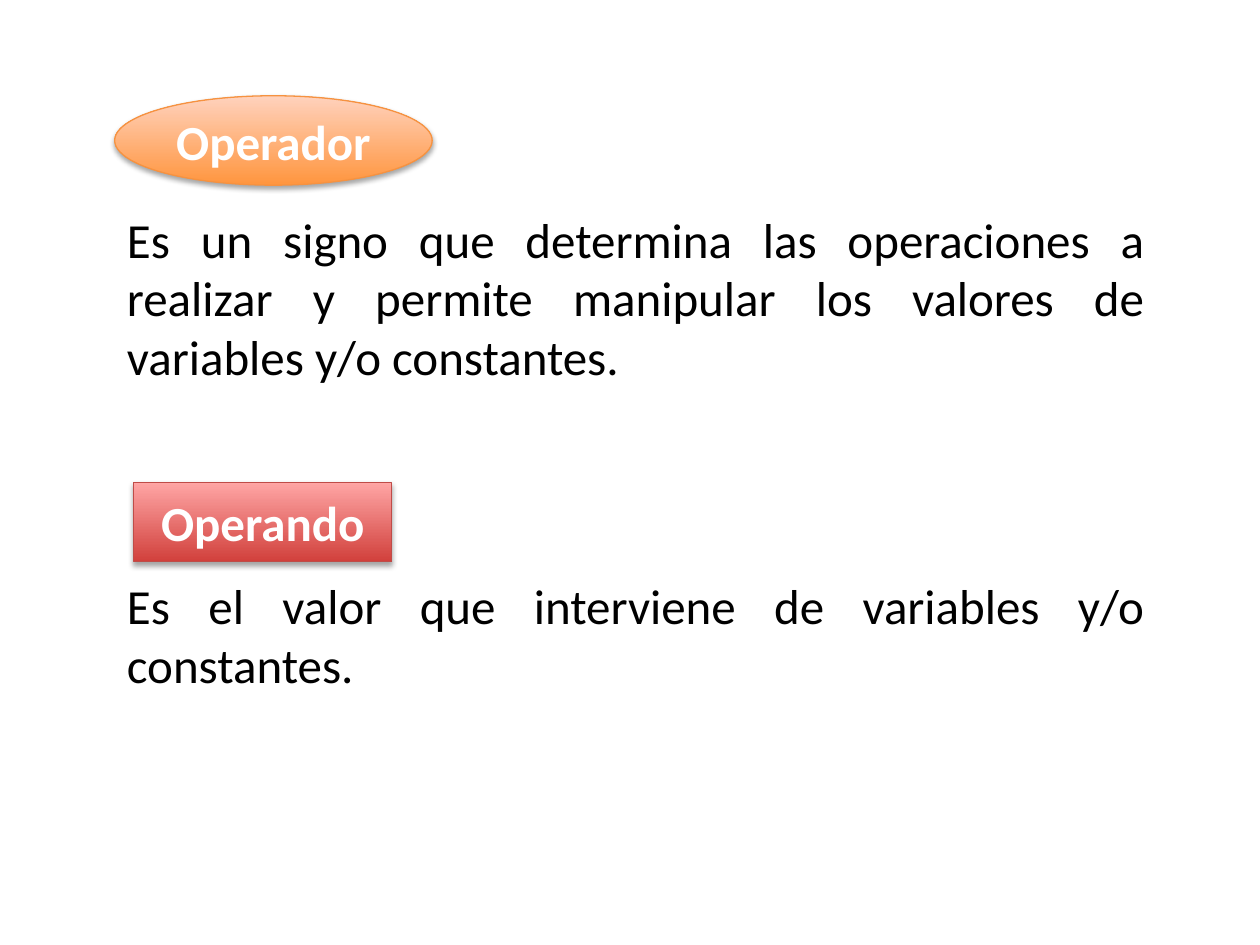
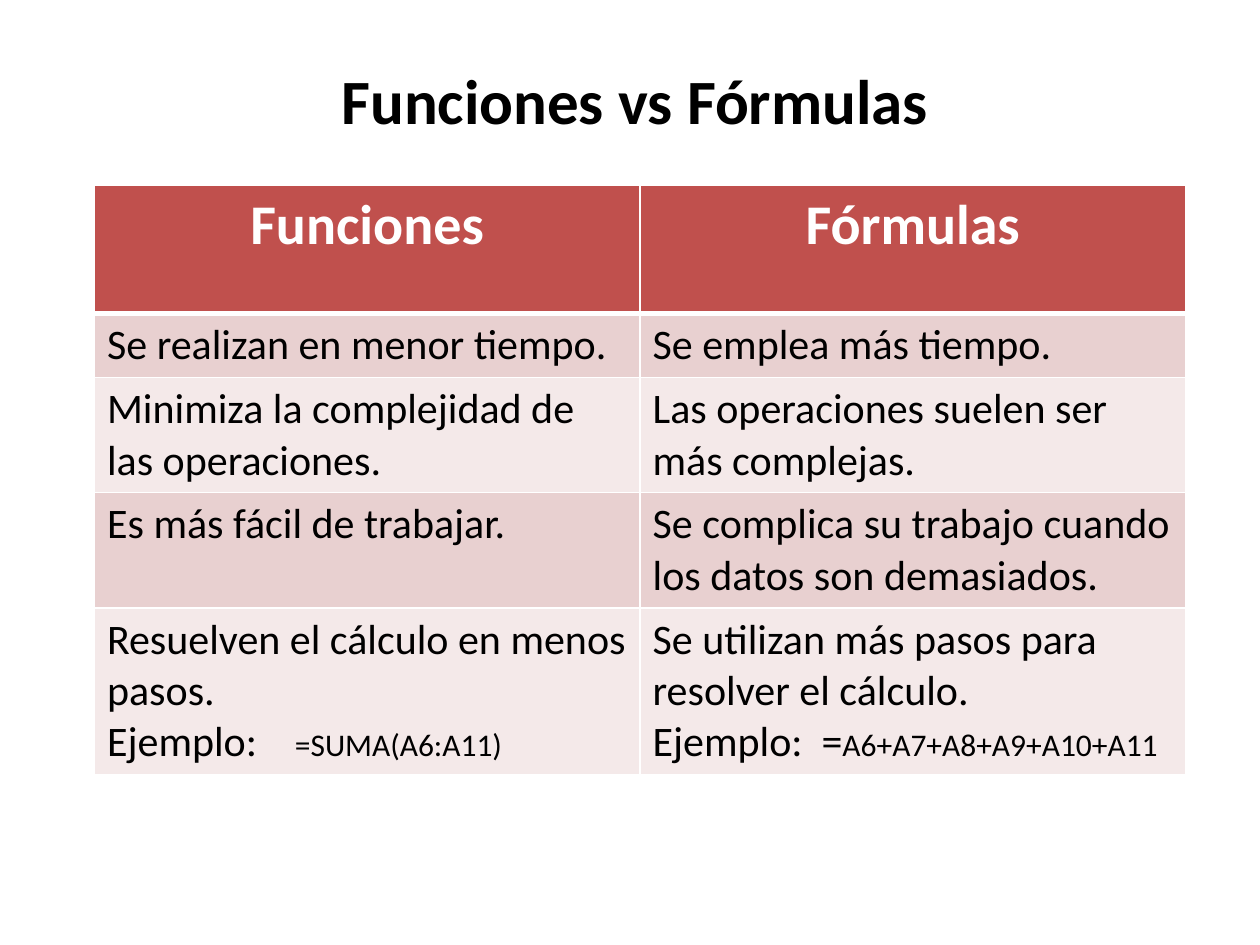
from lxml import etree
from pptx import Presentation
from pptx.dml.color import RGBColor
from pptx.enum import shapes, text
from pptx.oxml.ns import qn
from pptx.util import Inches, Pt

FONT = "Calibri"
BLACK = RGBColor(0x00, 0x00, 0x00)
WHITE = RGBColor(0xFF, 0xFF, 0xFF)
RED = RGBColor(0xC0, 0x50, 0x4D)
ROSE = RGBColor(0xE8, 0xD0, 0xD0)
PALE = RGBColor(0xF4, 0xE9, 0xE9)
# Each trio: gradient bottom, gradient top, outline
ORANGE_TONES = [RGBColor.from_string(c) for c in ("FF953E", "FFD2BD", "F69240")]
RED_TONES = [RGBColor.from_string(c) for c in ("D1403C", "FFA6A5", "BF4C48")]

ALIGN = text.PP_ALIGN
ROW_HEIGHTS = (1.02, 0.49, 0.91, 0.91, 0.91)
HEADS = ("Funciones", "Fórmulas")
POINTS = (
    ("Se realizan en menor tiempo.", "Se emplea más tiempo."),
    ("Minimiza la complejidad de las operaciones.",
     "Las operaciones suelen ser más complejas."),
    ("Es más fácil de trabajar.",
     "Se complica su trabajo cuando los datos son demasiados."),
    ("Resuelven el cálculo en menos pasos.",
     "Se utilizan más pasos para resolver el cálculo."),
)
# Tab position, then the runs that follow "Ejemplo:"
SAMPLES = (
    (1.49, [("=SUMA(A6:A11)", 18)]),
    (1.34, [("=", 24), ("A6+A7+A8+A9+A10+A11", 18)]),
)


def add_run(para, words, size, color=BLACK, bold=False):
    run = para.add_run()
    run.text = words
    font = run.font
    font.name, font.size, font.bold = FONT, Pt(size), bold
    font.color.rgb = color


def add_shadow(shape):
    shape.shadow.inherit = False
    effects = shape._element.spPr.find(qn("a:effectLst"))
    outer = etree.SubElement(effects, qn("a:outerShdw"), blurRad=str(Pt(3.1)),
                             dist=str(Pt(1.8)), dir="5400000", rotWithShape="0")
    color = etree.SubElement(outer, qn("a:srgbClr"), val="000000")
    etree.SubElement(color, qn("a:alpha"), val="35000")


def add_badge(slide, kind, box, words, tones):
    """Add a shaded shape that names a term."""
    badge = slide.shapes.add_shape(kind, *map(Inches, box))
    low, high, edge = tones
    badge.fill.gradient()
    badge.fill.gradient_angle = 90
    for stop, tone in zip(badge.fill.gradient_stops, (low, high)):
        stop.color.rgb = tone
    badge.line.color.rgb = edge
    badge.line.width = Pt(0.75)
    add_shadow(badge)
    frame = badge.text_frame
    frame.vertical_anchor = text.MSO_ANCHOR.MIDDLE
    para = frame.paragraphs[0]
    para.alignment = ALIGN.CENTER
    add_run(para, words, 28, WHITE, True)


def add_body(slide, top, height, words):
    box = slide.shapes.add_textbox(Inches(0.91), Inches(top),
                                   Inches(8.27), Inches(height))
    box.text_frame.word_wrap = True
    para = box.text_frame.paragraphs[0]
    para.alignment = ALIGN.JUSTIFY
    add_run(para, words, 28)


def set_title(slide, words):
    title = slide.shapes.title
    title.left, title.top = Inches(0.82), Inches(0.44)
    title.width, title.height = Inches(8.44), Inches(0.71)
    frame = title.text_frame
    frame.vertical_anchor = text.MSO_ANCHOR.TOP
    para = frame.paragraphs[0]
    para.alignment = ALIGN.CENTER
    add_run(para, words, 36, BLACK, True)


def style_cell(cell, fill, top, base):
    """Set the fill and white borders, with top and base widths in points."""
    props = cell._tc.get_or_add_tcPr()
    for side, width in (("L", 1), ("R", 1), ("T", top), ("B", base)):
        line = etree.SubElement(props, qn("a:ln" + side), w=str(Pt(width)))
        solid = etree.SubElement(line, qn("a:solidFill"))
        etree.SubElement(solid, qn("a:srgbClr"), val=str(WHITE))
    cell.fill.solid()
    cell.fill.fore_color.rgb = fill


def add_sample(cell, tab, runs):
    para = cell.text_frame.add_paragraph()
    stops = etree.SubElement(para._p.get_or_add_pPr(), qn("a:tabLst"))
    etree.SubElement(stops, qn("a:tab"), pos=str(Inches(tab)), algn="l")
    add_run(para, "Ejemplo:\t", 24)
    for words, size in runs:
        add_run(para, words, size)


def add_grid(slide):
    grid = slide.shapes.add_table(
        len(ROW_HEIGHTS), len(HEADS), Inches(0.75), Inches(1.47),
        Inches(8.66), Inches(sum(ROW_HEIGHTS))).table
    for row, height in zip(grid.rows, ROW_HEIGHTS):
        row.height = Inches(height)
    for col, head in enumerate(HEADS):
        cell = grid.cell(0, col)
        style_cell(cell, RED, 1, 3)
        para = cell.text_frame.paragraphs[0]
        para.alignment = ALIGN.CENTER
        add_run(para, head, 32, WHITE, True)
    for row, pair in enumerate(POINTS, 1):
        for col, words in enumerate(pair):
            cell = grid.cell(row, col)
            style_cell(cell, ROSE if row % 2 else PALE, 3 if row == 1 else 1, 1)
            add_run(cell.text_frame.paragraphs[0], words, 24)
    for col, (tab, runs) in enumerate(SAMPLES):
        add_sample(grid.cell(len(POINTS), col), tab, runs)


def main():
    deck = Presentation()
    deck.slide_width, deck.slide_height = Inches(10), Inches(7.5)
    title_only, blank = deck.slide_layouts[5], deck.slide_layouts[6]

    terms = deck.slides.add_slide(blank)
    kinds = shapes.MSO_SHAPE
    add_badge(terms, kinds.OVAL, (0.91, 0.76, 2.52, 0.71), "Operador", ORANGE_TONES)
    add_body(terms, 1.61, 1.51,
             "Es un signo que determina las operaciones a realizar y permite "
             "manipular los valores de variables y/o constantes.")
    add_badge(terms, kinds.RECTANGLE, (1.06, 3.83, 2.05, 0.63), "Operando", RED_TONES)
    add_body(terms, 4.52, 1.04,
             "Es el valor que interviene de variables y/o constantes.")

    versus = deck.slides.add_slide(title_only)
    set_title(versus, "Funciones vs Fórmulas")
    add_grid(versus)
    deck.save("out.pptx")


if __name__ == "__main__":
    main()
